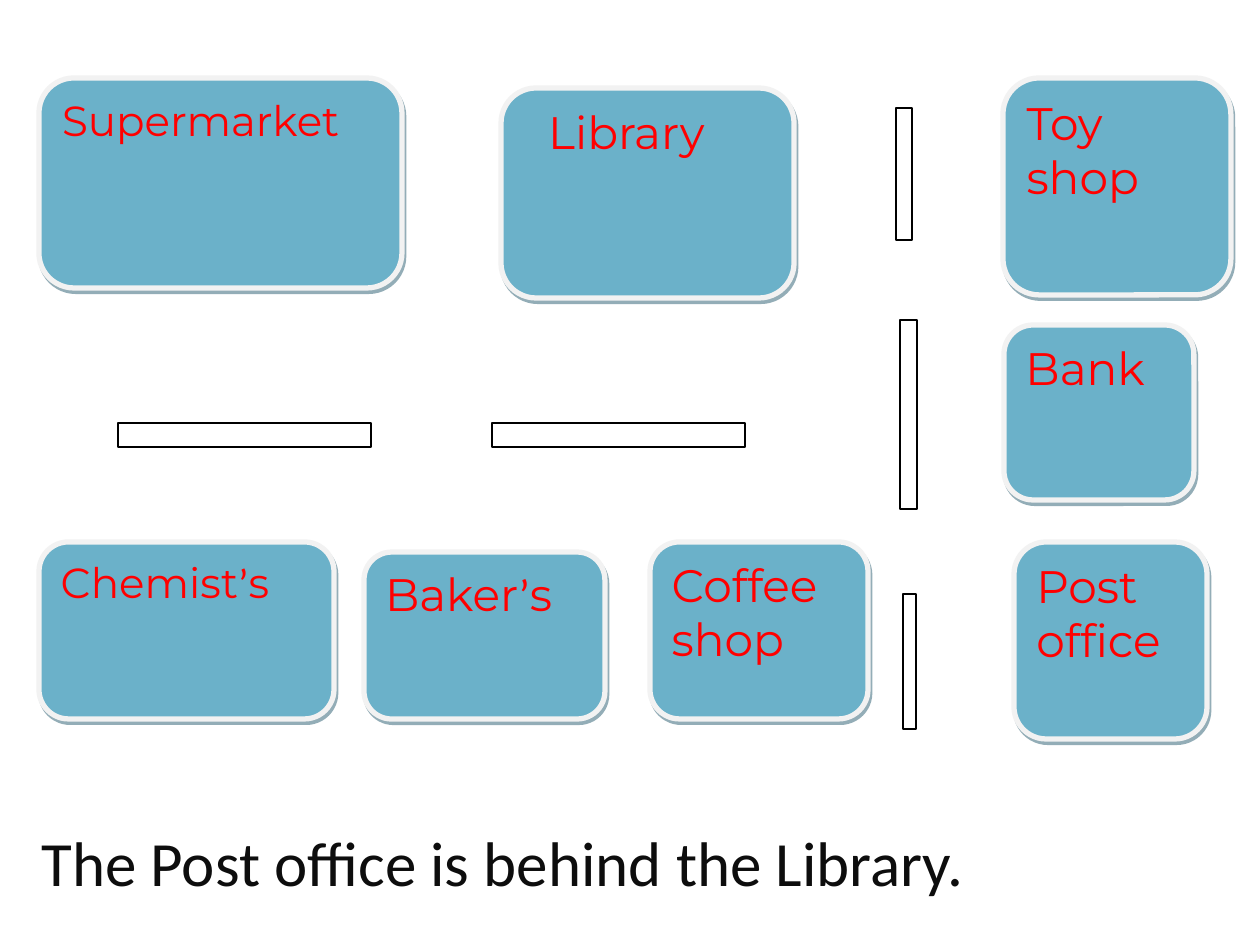
from typing import NamedTuple

from lxml import etree
from pptx import Presentation
from pptx import util as u
from pptx.dml.color import RGBColor
from pptx.enum import shapes, text
from pptx.oxml import ns

SCALE = 914400 / 126  # EMU in one px
BLUE = RGBColor(0x6B, 0xB1, 0xC9)
PALE = RGBColor(0xF2, 0xF2, 0xF2)
SHADE = RGBColor(0x29, 0x5D, 0x70)
RED = RGBColor(0xFF, 0x00, 0x00)
WHITE = RGBColor(0xFF, 0xFF, 0xFF)
BLACK = RGBColor(0x00, 0x00, 0x00)
INK = RGBColor(0x0D, 0x0D, 0x0D)


class Box(NamedTuple):
    left: int
    top: int
    width: int
    height: int


class Place(NamedTuple):
    name: str
    box: Box
    size: int = 26
    inset: int = 13


PLACES = [
    Place("Supermarket", Box(39, 78, 363, 210), size=24),
    Place("Library", Box(501, 88, 293, 210), inset=37),
    Place("Toy shop", Box(1003, 78, 228, 217)),
    Place("Bank", Box(1004, 325, 190, 175)),
    Place("Post office", Box(1014, 542, 193, 197)),
    Place("Chemist’s", Box(39, 542, 295, 177), size=24),
    Place("Baker’s", Box(364, 552, 241, 167)),
    Place("Coffee shop", Box(650, 542, 218, 177)),
]
ROADS = [
    Box(118, 423, 253, 24),
    Box(492, 423, 253, 24),
    Box(896, 108, 16, 132),
    Box(900, 320, 17, 189),
    Box(903, 594, 13, 135),
]


def px(num: int) -> u.Emu:
    return u.Emu(round(num * SCALE))


def style(font, name: str, size: int, color: RGBColor) -> None:
    font.name = name
    font.size = u.Pt(size)
    font.color.rgb = color


def block(slide, kind, box: Box, fill: RGBColor, edge: RGBColor, width: float):
    shape = slide.shapes.add_shape(kind, *map(px, box))
    shape.shadow.inherit = False
    shape.fill.solid()
    shape.fill.fore_color.rgb = fill
    shape.line.color.rgb = edge
    shape.line.width = u.Pt(width)
    return shape


def shadow(shape) -> None:
    """Add a hard, half-transparent shadow at the lower right."""
    effects = shape.element.spPr.find(ns.qn("a:effectLst"))
    outer = etree.SubElement(effects, ns.qn("a:outerShdw"), blurRad="0",
                             dist=str(u.Pt(2.2)), dir=str(63 * 60000),
                             algn="ctr", rotWithShape="0")
    color = etree.SubElement(outer, ns.qn("a:srgbClr"), val=str(SHADE))
    etree.SubElement(color, ns.qn("a:alpha"), val="50000")


def building(slide, place: Place) -> None:
    shape = block(slide, shapes.MSO_SHAPE.ROUNDED_RECTANGLE, place.box,
                  BLUE, PALE, 3)
    shadow(shape)
    frame = shape.text_frame
    frame.word_wrap = True
    frame.vertical_anchor = text.MSO_ANCHOR.TOP
    frame.margin_left = px(place.inset)
    para = frame.paragraphs[0]
    para.alignment = text.PP_ALIGN.LEFT
    style(para.font, "Montserrat", place.size, RED)
    # The apostrophe has a font of its own
    for part in place.name.partition("’"):
        if part:
            run = para.add_run()
            run.text = part
            if part == "’":
                run.font.name = "Calibri"


def caption(slide, words: str, box: Box) -> None:
    frame = slide.shapes.add_textbox(*map(px, box)).text_frame
    frame.word_wrap = True
    frame.auto_size = text.MSO_AUTO_SIZE.SHAPE_TO_FIT_TEXT
    para = frame.paragraphs[0]
    para.text = words
    style(para.font, "Calibri", 36, INK)


def main() -> None:
    deck = Presentation()
    deck.slide_width, deck.slide_height = px(1260), px(945)
    slide = deck.slides.add_slide(deck.slide_layouts[6])

    # Town map
    for place in PLACES:
        building(slide, place)
    for road in ROADS:
        block(slide, shapes.MSO_SHAPE.RECTANGLE, road, WHITE, BLACK, 0.75)

    # Sentence about the map
    caption(slide, "The Post office is behind the Library.",
            Box(29, 817, 1231, 89))
    deck.save("out.pptx")


if __name__ == "__main__":
    main()
